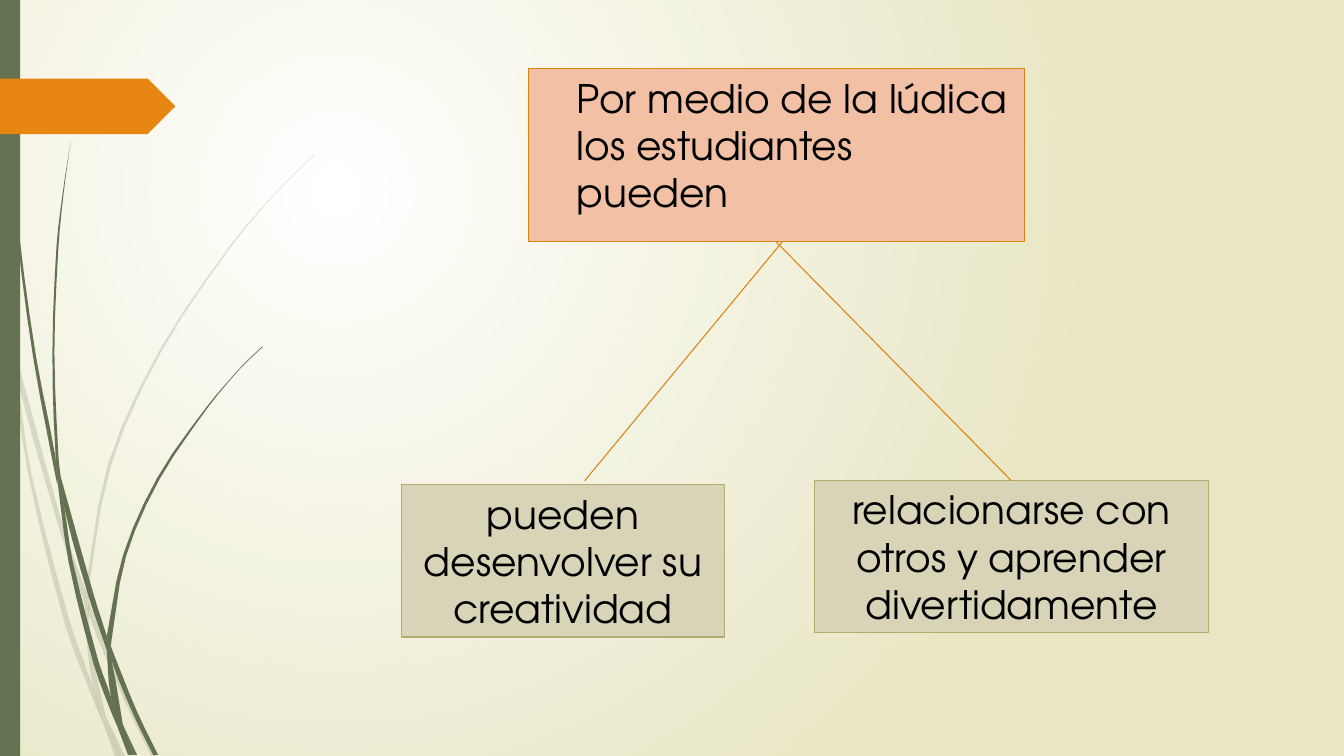
from dataclasses import dataclass

from lxml import etree
from pptx import Presentation
from pptx.dml.color import RGBColor
from pptx.enum.shapes import MSO_CONNECTOR, MSO_SHAPE
from pptx.enum.text import MSO_ANCHOR, MSO_AUTO_SIZE, PP_ALIGN
from pptx.oxml.ns import qn
from pptx.shapes.autoshape import Shape
from pptx.slide import Slide
from pptx.util import Inches, Pt

RECTANGLE = MSO_SHAPE.RECTANGLE
PENTAGON = MSO_SHAPE.PENTAGON
STRAIGHT = MSO_CONNECTOR.STRAIGHT
LEFT, CENTER = PP_ALIGN.LEFT, PP_ALIGN.CENTER
TOP = MSO_ANCHOR.TOP
FIXED, GROW = MSO_AUTO_SIZE.NONE, MSO_AUTO_SIZE.SHAPE_TO_FIT_TEXT
BOTTOM_SITE, TOP_SITE = 2, 0
CURVE_STEPS = 3
FONT = "TeX Gyre Adventor"
COLORS = {
    "white": "FFFFFF",
    "cream": "E8E6C4",
    "green": "647252",
    "orange": "E78712",
    "peach": "F1C0A5",
    "orange line": "DD8111",
    "sage": "D8D4B7",
    "sage line": "B3AC6E",
    "text": "000000",
}

Point = tuple[float, float]


@dataclass(frozen=True)
class Blade:
    """A piece of a grass blade, given by its two edges from top to bottom."""
    left: list[Point]
    right: list[Point]


@dataclass(frozen=True)
class Box:
    """A box of the concept map."""
    text: str
    left: float
    top: float
    width: float
    height: float
    fill: str
    line: str
    align: PP_ALIGN = CENTER
    auto_size: MSO_AUTO_SIZE = GROW
    margin_left: float = 0.1
    margin_top: float = 0.05


PALE_BLADES = [
    Blade([(0, 2.99), (0.1, 3.44), (0.11, 3.5)], [(0, 2.82), (0.09, 3.22), (0.11, 3.5)]),
    Blade([(0.14, 3.45), (0.17, 3.76), (0.58, 5.22), (0.84, 5.99)],
          [(0.14, 3.45), (0.62, 5.2), (0.85, 5.86)]),
    Blade([(0.88, 5.96), (0.88, 6.1), (1.23, 6.94), (1.5, 7.5)],
          [(0.88, 5.96), (0.92, 6.07), (1.27, 6.92), (1.55, 7.5)]),
    Blade([(1.05, 7.11), (1.19, 7.5)], [(1.05, 7.11), (1.24, 7.5)]),
    Blade([(0.11, 3.5), (0.28, 4.7), (0.65, 6.21), (0.92, 6.93), (1.01, 7.14)],
          [(0.11, 3.5), (0.17, 3.76), (0.31, 4.69), (0.7, 6.19), (0.93, 6.83), (1.01, 7.14)]),
    Blade([(0.84, 5.99), (0.87, 6.46), (0.93, 6.83), (1.05, 7.11)],
          [(0.84, 5.99), (0.88, 6.1), (0.91, 6.46), (1.05, 7.11)]),
    Blade([(3.12, 1.53), (2.89, 1.75), (2.68, 1.97), (2.28, 2.44), (1.58, 3.48), (1.07, 4.61),
           (0.85, 5.84), (0.85, 5.86)],
          [(3.12, 1.54), (2.9, 1.75), (2.68, 1.98), (2.29, 2.45), (1.6, 3.49), (1.1, 4.62),
           (0.88, 5.84), (0.88, 5.96)]),
    Blade([(1.01, 7.14), (1.14, 7.5)], [(1.01, 7.14), (1.19, 7.5)]),
    Blade([(0.85, 5.86), (0.84, 5.99), (0.88, 6.08)], [(0.85, 5.86), (0.88, 5.96), (0.88, 6.1)]),
    Blade([(0.93, 6.83), (0.99, 7.07), (1.01, 7.14), (1.19, 7.5)],
          [(0.93, 6.83), (0.96, 6.92), (1.05, 7.11), (1.19, 7.5)]),
]
DARK_BLADES = [
    Blade([(0.03, 0), (0.04, 0.48), (0.07, 1.1), (0.17, 2.33), (0.33, 3.55), (0.56, 4.77), (0.57, 4.81)],
          [(0.04, 0), (0.05, 0.48), (0.08, 1.09), (0.19, 2.32), (0.36, 3.55), (0.55, 4.53), (0.57, 4.81)]),
    Blade([(0.6, 4.72), (0.64, 5.05), (0.88, 5.92), (1.06, 6.45)],
          [(0.6, 4.72), (0.93, 5.9), (1.06, 6.31)]),
    Blade([(1.1, 6.41), (1.11, 6.56), (1.32, 7.08), (1.52, 7.49)],
          [(1.1, 6.41), (1.13, 6.49), (1.36, 7.06), (1.57, 7.49)]),
    Blade([(0.57, 4.77), (0.68, 5.57), (0.93, 6.59), (1.11, 7.08), (1.17, 7.22)],
          [(0.57, 4.77), (0.64, 5.05), (0.72, 5.56), (0.98, 6.57), (1.1, 6.91), (1.17, 7.22)]),
    Blade([(0.7, 1.41), (0.62, 1.93), (0.56, 2.45), (0.52, 3.49), (0.55, 4.49), (0.6, 4.72)],
          [(0.7, 1.41), (0.63, 1.93), (0.58, 2.45), (0.54, 3.49), (0.58, 4.53), (0.6, 4.72)]),
    Blade([(1.22, 7.19), (1.33, 7.49)], [(1.22, 7.19), (1.36, 7.49)]),
    Blade([(0.55, 4.49), (0.57, 4.77), (0.64, 5.05)], [(0.55, 4.49), (0.6, 4.72), (0.64, 5.05)]),
    Blade([(2.6, 3.44), (2.45, 3.58), (2.31, 3.73), (2.04, 4.05), (1.56, 4.74), (1.22, 5.51), (1.06, 6.31)],
          [(2.61, 3.44), (2.45, 3.59), (2.31, 3.74), (2.05, 4.06), (1.58, 4.76), (1.25, 5.52),
           (1.11, 6.33), (1.1, 6.41)]),
    Blade([(1.17, 7.22), (1.27, 7.49)], [(1.17, 7.22), (1.31, 7.49)]),
    Blade([(1.06, 6.45), (1.1, 6.91), (1.22, 7.19)], [(1.06, 6.45), (1.11, 6.56), (1.22, 7.19)]),
    Blade([(1.06, 6.31), (1.06, 6.45), (1.11, 6.56)], [(1.06, 6.31), (1.1, 6.41), (1.11, 6.56)]),
    Blade([(1.1, 6.91), (1.17, 7.22), (1.3, 7.49)], [(1.1, 6.91), (1.22, 7.19), (1.33, 7.49)]),
]
PREMISE = Box("Por medio de la lúdica los estudiantes pueden", 5.24, 0.68, 4.92, 1.72,
              "peach", "orange line", LEFT, FIXED, 0.48, 0.06)
RELATE = Box("relacionarse con otros y aprender divertidamente", 8.08, 4.77, 3.91, 1.51,
             "sage", "sage line")
CREATE = Box("pueden desenvolver su creatividad", 3.98, 4.81, 3.21, 1.51, "sage", "sage line")


def color(name: str) -> RGBColor:
    """Look up a named colour."""
    return RGBColor.from_string(COLORS[name])


def smooth(anchors: list[Point]) -> list[Point]:
    """Run a smooth curve through the anchors of an edge."""
    points = [complex(x, y) for x, y in anchors]
    chords = [after - before for before, after in zip([points[0], *points], [*points[1:], points[-1]])]
    headings = [chord / abs(chord) for chord in chords]
    curve = [points[0]]
    for start, end, leave, arrive in zip(points, points[1:], headings, headings[1:]):
        reach = abs(end - start) / 3
        for step in range(1, CURVE_STEPS + 1):
            t = step / CURVE_STEPS
            u = 1 - t
            curve.append(u**3 * start + 3 * u * u * t * (start + leave * reach)
                         + 3 * u * t * t * (end - arrive * reach) + t**3 * end)
    return [(point.real, point.imag) for point in curve]


def paint(shape: Shape, fill: str, line: str | None = None) -> None:
    """Give a shape a flat fill and an optional thin outline."""
    shape.shadow.inherit = False
    shape.fill.solid()
    shape.fill.fore_color.rgb = color(fill)
    if line is None:
        shape.line.fill.background()
    else:
        shape.line.color.rgb = color(line)
        shape.line.width = Pt(0.75)


def paint_background(slide: Slide) -> None:
    """Fill the background with a radial gradient."""
    fill = slide.background.fill
    fill.gradient()
    for stop, name in zip(fill.gradient_stops, ("white", "cream")):
        stop.color.rgb = color(name)
    gradient = slide.element.find(".//" + qn("a:gradFill"))
    gradient.remove(gradient.find(qn("a:lin")))
    circle = etree.SubElement(gradient, qn("a:path"), {"path": "circle"})
    focus = {"l": "50000", "t": "50000", "r": "100000", "b": "100000"}
    etree.SubElement(circle, qn("a:fillToRect"), focus)


def draw_blade(slide: Slide, blade: Blade, opacity: int = 100) -> None:
    """Draw one piece of grass."""
    outline = smooth(blade.left) + smooth(blade.right)[::-1]
    start, *rest = [(Inches(x), Inches(y)) for x, y in outline]
    builder = slide.shapes.build_freeform(*start)
    builder.add_line_segments(rest)
    shape = builder.convert_to_shape()
    paint(shape, "green")
    if opacity < 100:
        fill_color = shape.element.spPr.find(".//" + qn("a:srgbClr"))
        etree.SubElement(fill_color, qn("a:alpha"), {"val": str(opacity * 1000)})


def draw_box(slide: Slide, box: Box) -> Shape:
    """Draw one box with its text."""
    place = map(Inches, (box.left, box.top, box.width, box.height))
    shape = slide.shapes.add_shape(RECTANGLE, *place)
    paint(shape, box.fill, box.line)
    frame = shape.text_frame
    frame.word_wrap = True
    frame.auto_size = box.auto_size
    frame.vertical_anchor = TOP
    frame.margin_left, frame.margin_top = Inches(box.margin_left), Inches(box.margin_top)
    paragraph = frame.paragraphs[0]
    paragraph.text = box.text
    paragraph.alignment = box.align
    paragraph.font.name = FONT
    paragraph.font.size = Pt(28)
    paragraph.font.color.rgb = color("text")
    return shape


def draw_branch(slide: Slide, start: Point, end: Point, joined: tuple[Shape, Shape] | None = None) -> None:
    """Draw a branch line, joined to a parent and a child box if given."""
    connector = slide.shapes.add_connector(STRAIGHT, *map(Inches, start + end))
    if joined:
        parent, child = joined
        connector.begin_connect(parent, BOTTOM_SITE)
        connector.end_connect(child, TOP_SITE)
    connector.line.color.rgb = color("orange line")
    connector.line.width = Pt(0.75)
    etree.SubElement(connector.element.spPr, qn("a:effectLst"))


def main() -> None:
    """Build the slide and save it."""
    presentation = Presentation()
    presentation.slide_width, presentation.slide_height = Inches(40 / 3), Inches(7.5)
    slide = presentation.slides.add_slide(presentation.slide_layouts[6])
    paint_background(slide)
    for blade in PALE_BLADES:
        draw_blade(slide, blade, 20)
    for blade in DARK_BLADES:
        draw_blade(slide, blade)
    side_bar = slide.shapes.add_shape(RECTANGLE, 0, 0, Inches(0.2), presentation.slide_height)
    paint(side_bar, "green")
    marker = slide.shapes.add_shape(PENTAGON, 0, Inches(0.78), Inches(1.74), Inches(0.55))
    paint(marker, "orange")
    premise, relate = draw_box(slide, PREMISE), draw_box(slide, RELATE)
    draw_branch(slide, (7.7, 2.4), (10.03, 4.77), (premise, relate))
    draw_branch(slide, (7.76, 2.4), (5.8, 4.77))
    draw_box(slide, CREATE)
    presentation.save("out.pptx")


if __name__ == "__main__":
    main()
